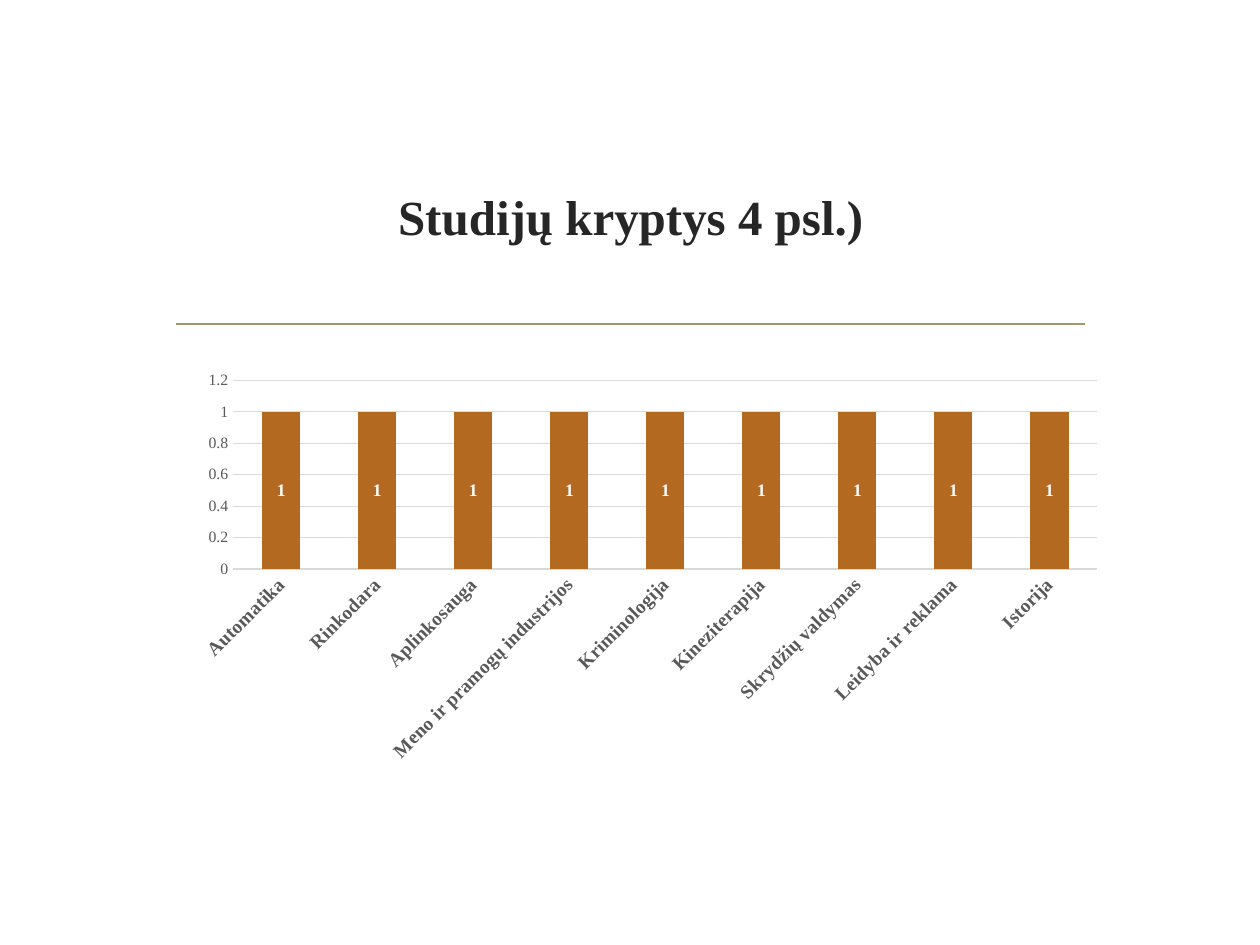
from pptx import Presentation, util as u
from pptx.chart import data as chart_data
from pptx.dml.color import RGBColor
from pptx.enum import chart as ce, shapes, text
from pptx.oxml.ns import qn
from lxml import etree

theme = {
    "font": "Times New Roman",
    "title": ("262626", 28, True),
    "base": ("000000", 10, False),
    "category": ("595959", 11, True),
    "value": ("595959", 9, False),
    "label": ("FFFFFF", 10, True),
    "rule": "AB946B",
    "bar": "B3691F",
    "grid": "D9D9D9",
}


def px(length):
    return u.Emu(round(length * 914400 / 126))


def style(font, role):
    color, size, bold = theme[role]
    font.name = theme["font"]
    font.size = u.Pt(size)
    font.bold = bold
    font.color.rgb = RGBColor.from_string(color)


deck = Presentation()
deck.slide_width, deck.slide_height = px(1260), px(945)
page = deck.slides.add_slide(deck.slide_layouts[6])

rule = page.shapes.add_connector(
    shapes.MSO_CONNECTOR.STRAIGHT, px(176), px(324), px(1085), px(324))
rule.line.color.rgb = RGBColor.from_string(theme["rule"])
rule.line.width = u.Pt(1.25)
etree.SubElement(rule._element.spPr, qn("a:effectLst"))

box = page.shapes.add_textbox(px(162), px(126), px(937), px(180))
frame = box.text_frame
frame.word_wrap = True
frame.vertical_anchor = text.MSO_ANCHOR.MIDDLE
frame.text = "Studijų kryptys 4 psl.)"
para = frame.paragraphs[0]
para.alignment = text.PP_ALIGN.CENTER
style(para.runs[0].font, "title")

fields = ["Automatika", "Rinkodara", "Aplinkosauga", "Meno ir pramogų industrijos",
          "Kriminologija", "Kineziterapija", "Skrydžių valdymas",
          "Leidyba ir reklama", "Istorija"]
data = chart_data.CategoryChartData()
data.categories = fields
data.add_series("Series 1", [1] * len(fields))
chart = page.shapes.add_chart(
    ce.XL_CHART_TYPE.COLUMN_STACKED, px(184), px(363), px(932), px(407), data).chart
chart.has_legend = False
chart.has_title = False
style(chart.font, "base")

for axis, role in ((chart.category_axis, "category"), (chart.value_axis, "value")):
    style(axis.tick_labels.font, role)
    axis.major_tick_mark = axis.minor_tick_mark = ce.XL_TICK_MARK.NONE
    axis.format.line.fill.background()

chart.category_axis._element.find(qn("c:txPr")).find(qn("a:bodyPr")).set("rot", "-2700000")
values = chart.value_axis
values.minimum_scale, values.maximum_scale, values.major_unit = 0, 1.2, 0.2
values.has_major_gridlines = True
grid = values.major_gridlines.format.line
grid.color.rgb = RGBColor.from_string(theme["grid"])
grid.width = u.Pt(0.75)

plot = chart.plots[0]
plot.vary_by_categories = False
plot.gap_width, plot.overlap = 150, 100
series = plot.series[0]
series.format.fill.solid()
series.format.fill.fore_color.rgb = RGBColor.from_string(theme["bar"])
labels = series.data_labels
labels.show_value = True
labels.position = ce.XL_LABEL_POSITION.CENTER
style(labels.font, "label")

deck.save("out.pptx")
